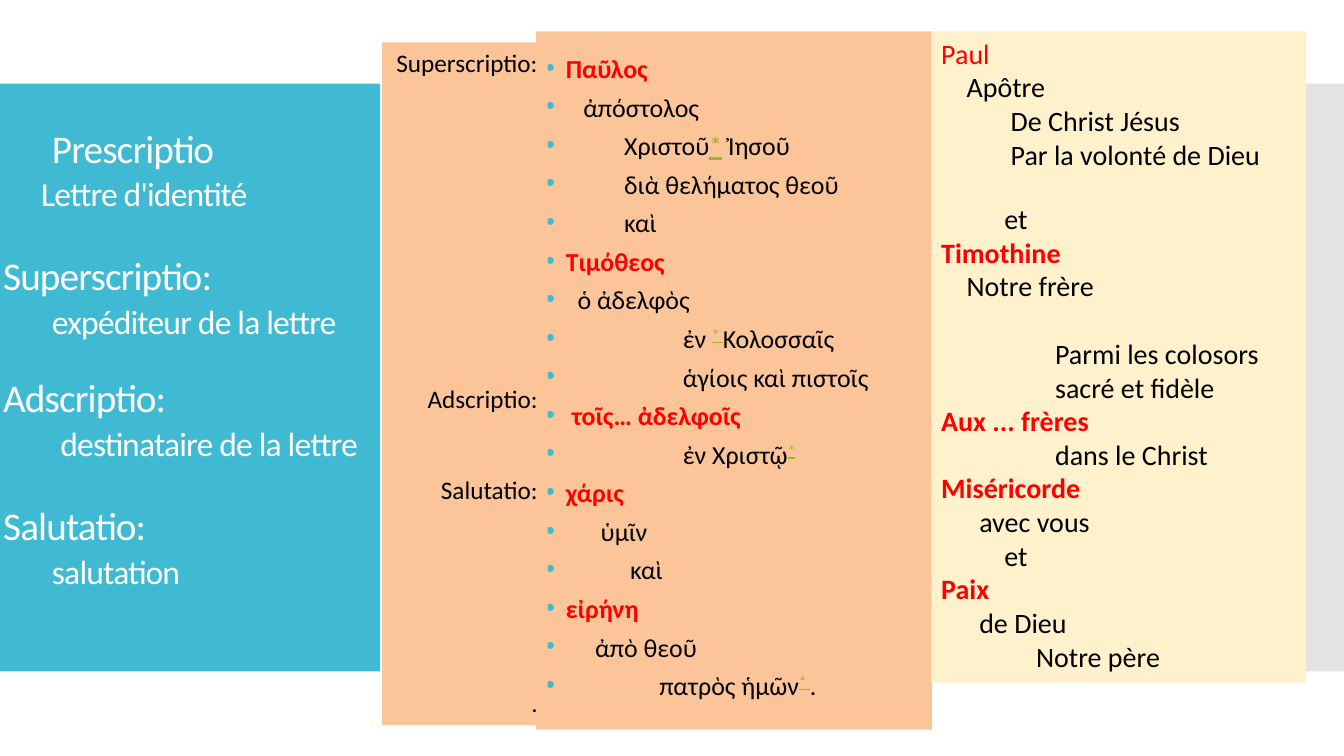
import pptx
import pptx.util
import pptx.dml.color
import pptx.enum.shapes
import pptx.enum.text
import pptx.oxml
import pptx.oxml.ns
from pptx.util import Cm, Pt

ALIGN = pptx.enum.text.PP_ALIGN
ANCHOR = pptx.enum.text.MSO_ANCHOR
TEAL, PEACH, CREAM, GREY = "40BAD2", "FCC599", "FFF1CB", "C8C8C8"
WHITE, BLACK, RED, GREEN = "FFFFFF", "000000", "FF0000", "90BB23"


def rgb(value):
    return pptx.dml.color.RGBColor.from_string(value)


def element(tag, **attrs):
    el = pptx.oxml.parse_xml(f"<a:{tag} {pptx.oxml.ns.nsdecls('a')}/>")
    for name, value in attrs.items():
        el.set(name, str(value))
    return el


class Deck:
    font = "Calibri"
    bullet_gap = 0.5

    def __init__(self):
        self.prs = pptx.Presentation()
        self.prs.slide_width, self.prs.slide_height = Cm(33.87), Cm(19.05)
        self.s = self.prs.slides.add_slide(self.prs.slide_layouts[6])

    def rect(self, box, color, alpha=None):
        sp = self.s.shapes.add_shape(
            pptx.enum.shapes.MSO_SHAPE.RECTANGLE, *map(Cm, box))
        sp.shadow.inherit = False
        sp.fill.solid()
        sp.fill.fore_color.rgb = rgb(color)
        sp.line.fill.background()
        if alpha:
            clr = sp.fill._xPr.find(".//" + pptx.oxml.ns.qn("a:srgbClr"))
            clr.append(element("alpha", val=alpha * 1000))
        return sp

    def textbox(self, box):
        return self.s.shapes.add_textbox(*map(Cm, box))

    def frame(self, sp, anchor=ANCHOR.TOP):
        tf = sp.text_frame
        tf.word_wrap = True
        tf.vertical_anchor = anchor
        return tf

    def paragraph(self, tf, first, text, size, color=BLACK, bold=False,
                  indent=0, before=0, spacing=None, align=ALIGN.LEFT,
                  bullet=False):
        p = tf.paragraphs[0] if first else tf.add_paragraph()
        pieces = text.split("|")
        p.text = pieces[0]
        for piece in pieces[1:]:
            p.add_run().text = piece
        p.alignment = align
        p.space_before = Pt(before)
        if spacing:
            p.line_spacing = spacing
        pPr = p._p.get_or_add_pPr()
        margin = Cm(indent + (self.bullet_gap if bullet else 0))
        pPr.set("marL", str(margin))
        pPr.set("indent", str(-margin if bullet else 0))
        if bullet:
            clr = element("buClr")
            clr.append(element("srgbClr", val=TEAL))
            pPr.append(clr)
            pPr.append(element("buFont", typeface="Arial"))
            pPr.append(element("buChar", char="•"))
        for r in p.runs:
            note = r.text.startswith("*")
            r.font.name = self.font
            r.font.size = Pt(size)
            r.font.bold = bold
            r.font.underline = note
            r.font.color.rgb = rgb(GREEN if note else color)
        return p

    def superscript(self, p):
        for r in p.runs:
            if r.text.startswith("*"):
                r._r.get_or_add_rPr().set("baseline", "30000")

    def tighten(self, p):
        for r in p.runs:
            r._r.get_or_add_rPr().set("spc", "-60")


TITLE = [
    ("Prescriptio", 28, 1.23, 0),
    ("Lettre d'identité", 24, 0.96, 4.4),
    ("Superscriptio:", 28, 0, 30.8),
    ("expéditeur de la lettre", 24, 1.23, 4.4),
    ("Adscriptio:", 28, 0, 26.4),
    ("destinataire de la lettre", 24, 1.44, 4.4),
    ("Salutatio:", 28, 0, 30.8),
    ("salutation", 24, 1.23, 4.4),
]
GREEK = [
    ("Παῦλος", 0), ("ἀπόστολος", 0.44), ("Χριστοῦ|*| Ἰησοῦ", 1.47),
    ("διὰ θελήματος θεοῦ", 1.47), ("καὶ", 1.47), ("Τιμόθεος", 0),
    ("ὁ ἀδελφὸς", 0.3), ("ἐν |* |Κολοσσαῖς", 2.95),
    ("ἁγίοις καὶ πιστοῖς", 2.95), ("τοῖς… ἀδελφοῖς", 0.15),
    ("ἐν Χριστῷ|*", 2.95), ("χάρις", 0), ("ὑμῖν", 0.88), ("καὶ", 1.62),
    ("εἰρήνη", 0), ("ἀπὸ θεοῦ", 0.74), ("πατρὸς ἡμῶν|* |.", 2.36),
]
LABELS = [("Superscriptio:", 0), ("Adscriptio:", 218),
          ("Salutatio:", 43.5), (".", 131)]
FRENCH = [
    ("Paul", 0, 0), ("Apôtre", 0.64, 0), ("De Christ Jésus", 1.75, 0),
    ("Par la volonté de Dieu", 1.75, 0), ("et", 1.59, 22),
    ("Timothine", 0, 0), ("Notre frère", 0.64, 0),
    ("Parmi les colosors", 2.87, 24.4), ("sacré et fidèle", 2.87, 0),
    ("Aux ... frères", 0, 0), ("dans le Christ", 2.87, 0),
    ("Miséricorde", 0, 0), ("avec vous", 0.96, 0), ("et", 1.59, 0),
    ("Paix", 0, 0), ("de Dieu", 0.96, 0), ("Notre père", 2.39, 0),
]


def main():
    deck = Deck()
    deck.rect((0, 2.11, 9.58, 14.81), TEAL)
    deck.rect((32.81, 2.11, 1.06, 14.81), GREY, alpha=50)

    tf = deck.frame(deck.textbox((0, 2.69, 9.62, 12.78)), ANCHOR.MIDDLE)
    tf.margin_left = Cm(0.08)
    for i, (text, size, indent, before) in enumerate(TITLE):
        deck.tighten(deck.paragraph(tf, i == 0, text, size, WHITE,
                                    indent=indent, before=before, spacing=0.9))

    tf = deck.frame(deck.rect((13.51, 0.79, 9.98, 17.6), PEACH), ANCHOR.MIDDLE)
    for i, (text, indent) in enumerate(GREEK):
        key = indent < 0.2
        p = deck.paragraph(tf, i == 0, text, 18.5, RED if key else BLACK, key,
                           indent, before=12, spacing=0.7, bullet=True)
        if not text.startswith("Χριστοῦ"):
            deck.superscript(p)

    tf = deck.frame(deck.rect((9.63, 1.07, 4.17, 17.2), PEACH))
    for i, (text, before) in enumerate(LABELS):
        deck.paragraph(tf, i == 0, text, 18, before=before, align=ALIGN.RIGHT)

    tf = deck.frame(deck.rect((23.47, 0.79, 9.45, 16.41), CREAM))
    for i, (text, indent, before) in enumerate(FRENCH):
        key = indent == 0
        deck.paragraph(tf, i == 0, text, 20, RED if key else BLACK,
                       key and i > 0, indent, before)

    deck.prs.save("out.pptx")


if __name__ == "__main__":
    main()
